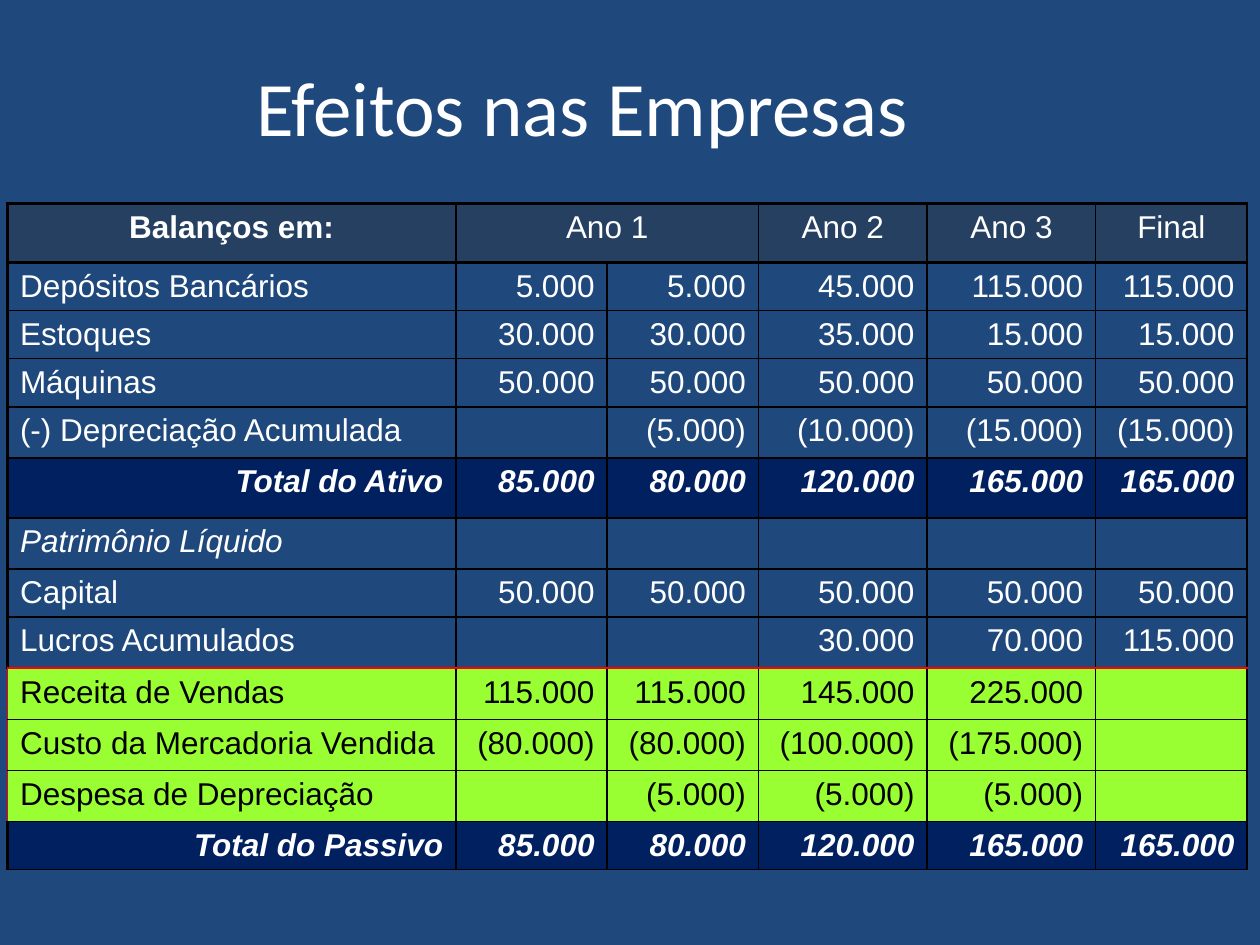
import lxml.etree
import pptx
import pptx.dml.color
import pptx.enum.text
import pptx.oxml.ns
import pptx.util

Cm = pptx.util.Cm
Pt = pptx.util.Pt
RGBColor = pptx.dml.color.RGBColor
ALIGN = pptx.enum.text.PP_ALIGN
qn = pptx.oxml.ns.qn

BLUE = RGBColor(0x1F, 0x49, 0x7D)
SLATE = RGBColor(0x25, 0x40, 0x61)
NAVY = RGBColor(0x00, 0x20, 0x60)
GREEN = RGBColor(0x99, 0xFF, 0x33)
RED = RGBColor(0xFF, 0x00, 0x00)
WHITE = RGBColor(0xFF, 0xFF, 0xFF)
BLACK = RGBColor(0x00, 0x00, 0x00)

COLUMN_WIDTHS = [9.04, 3.05, 3.05, 3.4, 3.4, 3.05]
ROW_HEIGHT = 0.97
ROW_HEIGHTS = {0: 1.19, 5: 1.21}

ROW_STYLES = {
    "header": {"fill": SLATE, "color": WHITE, "label": ALIGN.CENTER, "value": ALIGN.CENTER},
    "item": {"fill": None, "color": WHITE, "label": ALIGN.JUSTIFY, "value": ALIGN.RIGHT},
    "group": {"fill": None, "color": WHITE, "label": ALIGN.LEFT, "value": ALIGN.RIGHT, "italic": True},
    "result": {"fill": GREEN, "color": BLACK, "label": ALIGN.JUSTIFY, "value": ALIGN.RIGHT},
    "total": {"fill": NAVY, "color": WHITE, "label": ALIGN.RIGHT, "value": ALIGN.RIGHT,
              "bold": True, "italic": True},
}

BALANCE_ROWS = [
    ("header", "Balanços em:", "Ano 1", "", "Ano 2", "Ano 3", "Final"),
    ("item", "Depósitos Bancários", "5.000", "5.000", "45.000", "115.000", "115.000"),
    ("item", "Estoques", "30.000", "30.000", "35.000", "15.000", "15.000"),
    ("item", "Máquinas", "50.000", "50.000", "50.000", "50.000", "50.000"),
    ("item", "(-) Depreciação Acumulada", "", "(5.000)", "(10.000)", "(15.000)", "(15.000)"),
    ("total", "Total do Ativo", "85.000", "80.000", "120.000", "165.000", "165.000"),
    ("group", "Patrimônio Líquido", "", "", "", "", ""),
    ("item", "Capital", "50.000", "50.000", "50.000", "50.000", "50.000"),
    ("item", "Lucros Acumulados", "", "", "30.000", "70.000", "115.000"),
    ("result", "Receita de Vendas", "115.000", "115.000", "145.000", "225.000", ""),
    ("result", "Custo da Mercadoria Vendida", "(80.000)", "(80.000)", "(100.000)", "(175.000)", ""),
    ("result", "Despesa de Depreciação", "", "(5.000)", "(5.000)", "(5.000)", ""),
    ("total", "Total do Passivo", "85.000", "80.000", "120.000", "165.000", "165.000"),
]
FIRST_RESULT = [row[0] for row in BALANCE_ROWS].index("result")


def set_attributes(target, values):
    for name, value in values.items():
        setattr(target, name, value)


def add_title(slide, text):
    title = slide.shapes.title
    set_attributes(title, {"left": Cm(1.27), "top": Cm(0.33), "width": Cm(20.96), "height": Cm(3.61)})
    title.text_frame.text = text
    title.text_frame.vertical_anchor = pptx.enum.text.MSO_ANCHOR.MIDDLE
    paragraph = title.text_frame.paragraphs[0]
    paragraph.alignment = ALIGN.CENTER
    set_attributes(paragraph.runs[0].font, {"name": "Calibri", "size": Pt(44)})
    paragraph.runs[0].font.color.rgb = WHITE


def horizontal_border(boundary):
    if boundary == FIRST_RESULT:
        return RED, 1
    return BLACK, 2 if boundary < 2 else 1


def left_border(kind, column):
    if column > 0:
        return BLACK, 1
    return (RED, 1) if kind == "result" else (BLACK, 2)


def set_borders(cell, borders):
    properties = cell._tc.get_or_add_tcPr()
    for position, (side, (color, points)) in enumerate(borders.items()):
        line = lxml.etree.Element(qn("a:" + side), w=str(Pt(points)))
        fill = lxml.etree.SubElement(line, qn("a:solidFill"))
        lxml.etree.SubElement(fill, qn("a:srgbClr"), val=str(color))
        properties.insert(position, line)


def write_cell(cell, text, style, alignment):
    if style["fill"] is None:
        cell.fill.background()
    else:
        cell.fill.solid()
        cell.fill.fore_color.rgb = style["fill"]
    paragraph = cell.text_frame.paragraphs[0]
    paragraph.alignment = alignment
    if not text:
        paragraph.font.size = Pt(18)
        return
    run = paragraph.add_run()
    run.text = text
    set_attributes(run.font, {"name": "Arial", "size": Pt(18),
                              "bold": style.get("bold", False), "italic": style.get("italic", False)})
    run.font.color.rgb = style["color"]


def add_balance_table(slide):
    heights = [ROW_HEIGHTS.get(index, ROW_HEIGHT) for index in range(len(BALANCE_ROWS))]
    table = slide.shapes.add_table(len(heights), len(COLUMN_WIDTHS), Cm(0.15), Cm(4.1),
                                   Cm(sum(COLUMN_WIDTHS)), Cm(sum(heights))).table
    set_attributes(table, {"first_row": False, "horz_banding": False})
    for column, width in zip(table.columns, COLUMN_WIDTHS):
        column.width = Cm(width)
    for row_index, (kind, *texts) in enumerate(BALANCE_ROWS):
        table.rows[row_index].height = Cm(heights[row_index])
        style = ROW_STYLES[kind]
        for column_index, text in enumerate(texts):
            cell = table.cell(row_index, column_index)
            write_cell(cell, text, style, style["value" if column_index else "label"])
            set_borders(cell, {"lnL": left_border(kind, column_index), "lnR": (BLACK, 1),
                               "lnT": horizontal_border(row_index),
                               "lnB": horizontal_border(row_index + 1)})
    table.cell(0, 0).text_frame.paragraphs[0].runs[0].font.bold = True
    table.cell(0, 1).merge(table.cell(0, 2))


def main():
    presentation = pptx.Presentation()
    set_attributes(presentation, {"slide_width": Cm(25.4), "slide_height": Cm(19.05)})
    slide = presentation.slides.add_slide(presentation.slide_layouts[5])
    slide.background.fill.solid()
    slide.background.fill.fore_color.rgb = BLUE
    add_title(slide, "Efeitos nas Empresas")
    add_balance_table(slide)
    presentation.save("out.pptx")


if __name__ == "__main__":
    main()
